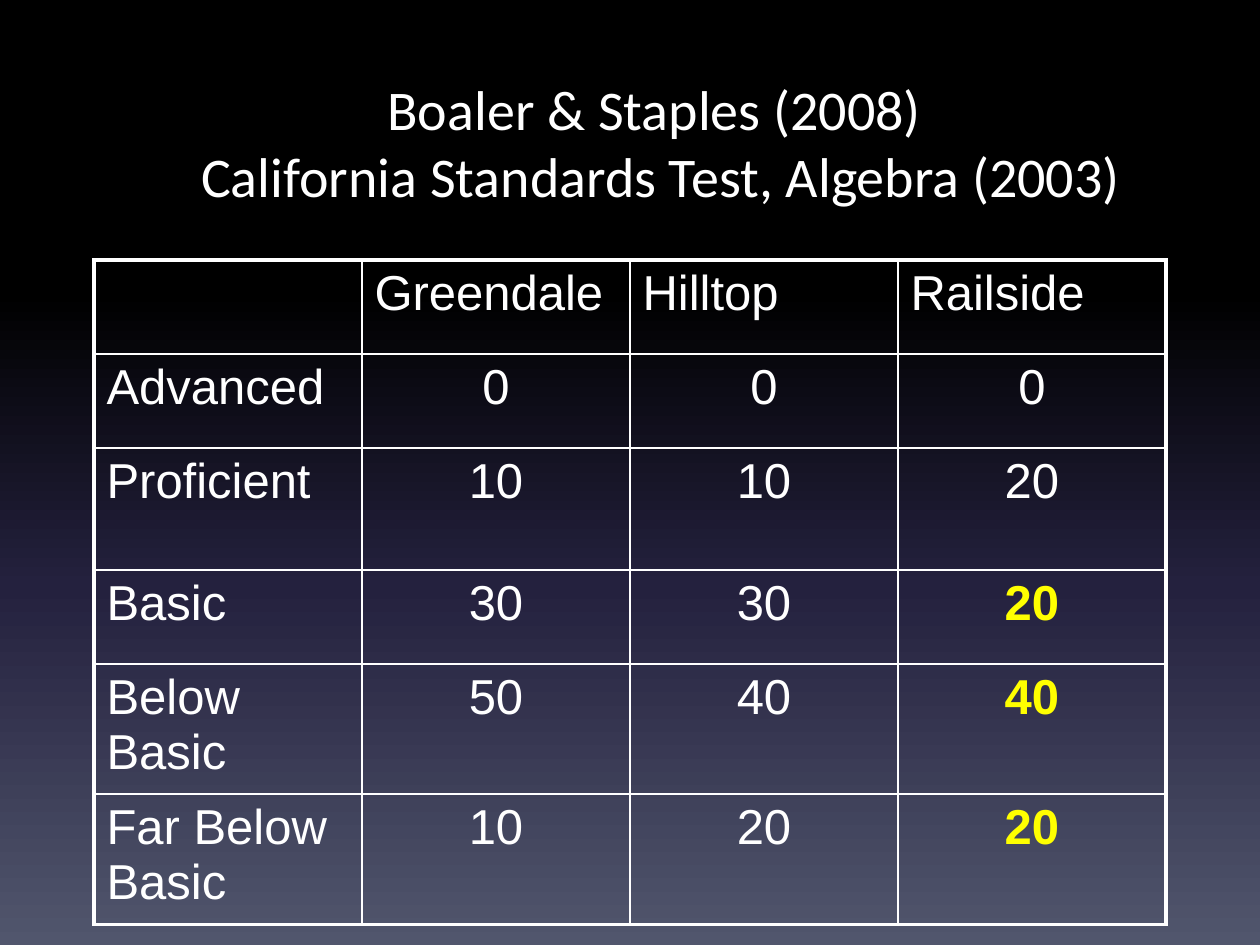
from lxml import etree
from pptx import Presentation
from pptx.dml.color import RGBColor
from pptx.enum.text import MSO_ANCHOR, PP_ALIGN
from pptx.oxml.ns import qn
from pptx.util import Pt

EMU_PER_PX = 914400 // 126
CENTER, LEFT = PP_ALIGN.CENTER, PP_ALIGN.LEFT
MIDDLE = MSO_ANCHOR.MIDDLE

COLORS = {
    "text": "FFFFFF",
    "highlight": "FFFF00",
    "black": "000000",
    "indigo": "24213E",
    "slate": "51566D",
}
BACKGROUND_STOPS = [(0, "black"), (31, "black"), (62, "indigo"), (100, "slate")]

TITLE_LINES = ["Boaler & Staples (2008) ", "California Standards Test, Algebra (2003)"]
SCORES = [
    ["", "Greendale", "Hilltop", "Railside"],
    ["Advanced", "0", "0", "0"],
    ["Proficient", "10", "10", "20"],
    ["Basic", "30", "30", "20"],
    ["Below Basic", "50", "40", "40"],
    ["Far Below Basic", "10", "20", "20"],
]
ROW_HEIGHTS = [94, 94, 122, 94, 122, 122]
COLUMN_WIDTH = 268
FIRST_HIGHLIGHTED_ROW = 3
OUTER_BORDER, INNER_BORDER = 2.25, 1


def px(value):
    return value * EMU_PER_PX


def add_run(paragraph, text, font_name, size, color="text", bold=False):
    run = paragraph.add_run()
    run.text = text
    run.font.name = font_name
    run.font.size = Pt(size)
    run.font.bold = bold
    run.font.color.rgb = RGBColor.from_string(COLORS[color])


def set_background(slide):
    fill = slide.background.fill
    fill.gradient()
    fill.gradient_angle = 270
    stop_list = slide.element.find(".//" + qn("a:gsLst"))
    for stop in list(stop_list):
        stop_list.remove(stop)
    for percent, color in BACKGROUND_STOPS:
        stop = etree.SubElement(stop_list, qn("a:gs"), pos=str(percent * 1000))
        etree.SubElement(stop, qn("a:srgbClr"), val=COLORS[color])


def add_title(slide):
    box = slide.shapes.add_textbox(px(94), px(63), px(1134), px(157))
    frame = box.text_frame
    frame.word_wrap = True
    frame.vertical_anchor = MIDDLE
    paragraph = frame.paragraphs[0]
    paragraph.alignment = CENTER
    for index, line in enumerate(TITLE_LINES):
        if index:
            paragraph.add_line_break()
        add_run(paragraph, line, "Calibri", 32)


def set_borders(cell, widths):
    """Draw the cell's borders; widths maps L, R, T and B to points."""
    properties = cell._tc.get_or_add_tcPr()
    for side, width in widths.items():
        line = etree.SubElement(properties, qn("a:ln" + side), w=str(Pt(width)))
        fill = etree.SubElement(line, qn("a:solidFill"))
        etree.SubElement(fill, qn("a:srgbClr"), val=COLORS["text"])


def fill_cell(cell, row, column):
    last_row, last_column = len(SCORES) - 1, len(SCORES[0]) - 1
    on_edge = {
        "L": column == 0,
        "R": column == last_column,
        "T": row == 0,
        "B": row == last_row,
    }
    set_borders(cell, {side: OUTER_BORDER if outer else INNER_BORDER
                       for side, outer in on_edge.items()})
    cell.fill.background()
    text = SCORES[row][column]
    if text:
        highlighted = column == last_column and row >= FIRST_HIGHLIGHTED_ROW
        paragraph = cell.text_frame.paragraphs[0]
        paragraph.alignment = CENTER if row and column else LEFT
        add_run(paragraph, text, "Arial", 28,
                "highlight" if highlighted else "text", highlighted)


def add_score_table(slide):
    column_count = len(SCORES[0])
    table = slide.shapes.add_table(
        len(SCORES), column_count, px(94), px(260),
        px(COLUMN_WIDTH * column_count), px(sum(ROW_HEIGHTS))).table
    table.first_row = False
    table.horz_banding = False
    for column in table.columns:
        column.width = px(COLUMN_WIDTH)
    for row, height in enumerate(ROW_HEIGHTS):
        table.rows[row].height = px(height)
        for column in range(column_count):
            fill_cell(table.cell(row, column), row, column)


def main():
    presentation = Presentation()
    presentation.slide_width = px(1260)
    presentation.slide_height = px(945)
    slide = presentation.slides.add_slide(presentation.slide_layouts[6])
    set_background(slide)
    add_title(slide)
    add_score_table(slide)
    presentation.save("out.pptx")


if __name__ == "__main__":
    main()
